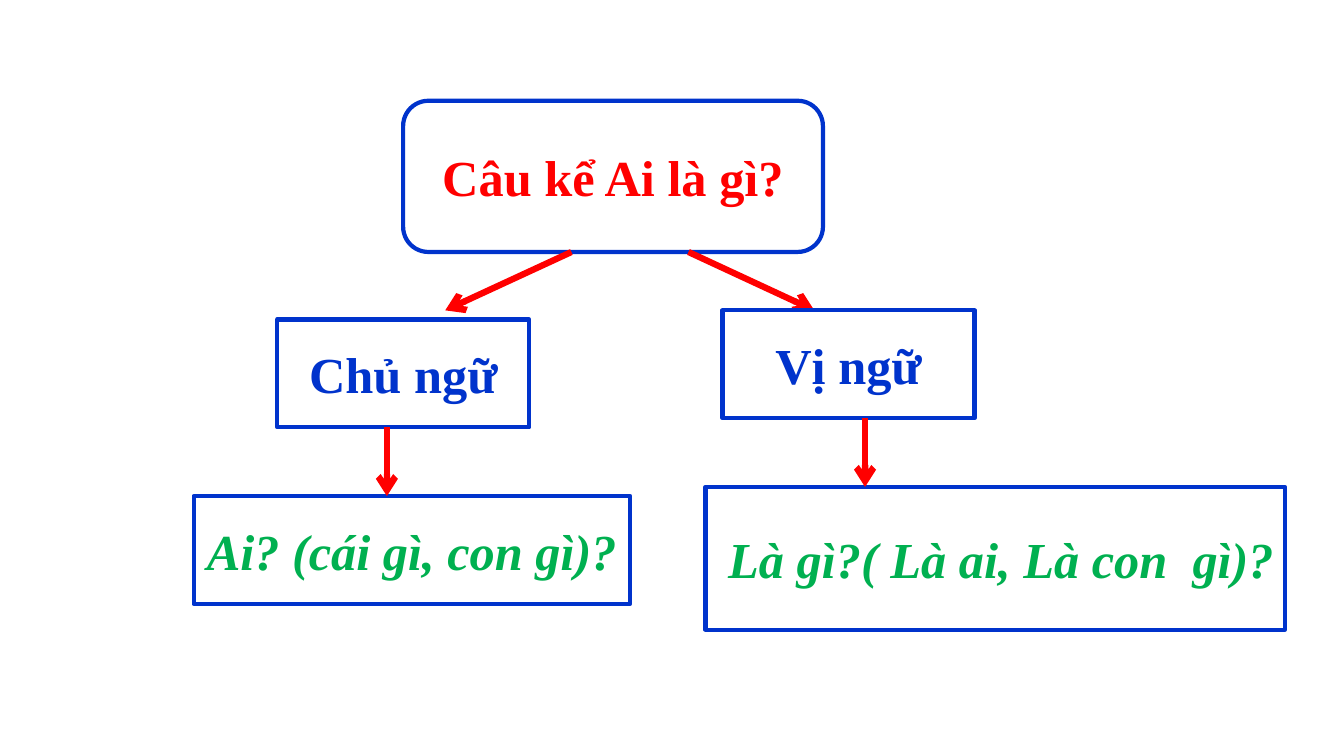
import pptx
import pptx.util
from lxml import etree
from pptx.dml.color import RGBColor
from pptx.enum.shapes import MSO_CONNECTOR, MSO_SHAPE
from pptx.enum.text import MSO_ANCHOR, PP_ALIGN
from pptx.oxml.ns import qn
from pptx.util import Cm, Pt

RED = RGBColor(0xFF, 0x00, 0x00)
BLUE = RGBColor(0x00, 0x33, 0xCC)
GREEN = RGBColor(0x00, 0xB0, 0x50)
WHITE = RGBColor(0xFF, 0xFF, 0xFF)

SENTENCE = ("Câu kể Ai là gì?", (10.16, 2.54, 10.58, 3.81))
BRANCHES = [
    {
        "part": ("Chủ ngữ", (6.99, 8.05, 6.35, 2.72)),
        "question": ("Ai? (cái gì, con gì)?", (4.88, 12.5, 11, 2.72)),
        "question_align": PP_ALIGN.CENTER,
        "question_insets": (0.25, 0.25),
        "sentence_arrow_x": (14.4, 11.22),
        "question_arrow_x": 9.75,
    },
    {
        "part": ("Vị ngữ", (18.21, 7.82, 6.35, 2.72)),
        "question": ("Là gì?( Là ai, Là con  gì)?", (17.78, 12.27, 14.6, 3.6)),
        "question_align": PP_ALIGN.LEFT,
        "question_insets": (0.57, 0),
        "sentence_arrow_x": (17.35, 20.52),
        "question_arrow_x": 21.8,
    },
]
ARROW_TIP_Y = 7.82


def add_box(slide, content, color, kind=MSO_SHAPE.RECTANGLE, italic=None,
            align=PP_ALIGN.CENTER, insets=(0.25, 0.25)):
    """Add a white, blue-edged box holding one bold line of text."""
    text, bounds = content
    box = slide.shapes.add_shape(kind, *map(Cm, bounds))
    box.shadow.inherit = False
    box.fill.solid()
    box.fill.fore_color.rgb = WHITE
    box.line.color.rgb = BLUE
    box.line.width = Pt(3)
    frame = box.text_frame
    frame.word_wrap = True
    frame.vertical_anchor = MSO_ANCHOR.MIDDLE
    frame.margin_left, frame.margin_right = map(Cm, insets)
    paragraph = frame.paragraphs[0]
    paragraph.text = text
    paragraph.alignment = align
    font = paragraph.font
    font.name = "Times New Roman"
    font.size = Pt(36)
    font.bold = True
    font.italic = italic
    font.color.rgb = color


def add_arrow(slide, start, end):
    """Add a thick red arrow from start to end."""
    arrow = slide.shapes.add_connector(MSO_CONNECTOR.STRAIGHT, *map(Cm, start + end))
    arrow.line.color.rgb = RED
    arrow.line.width = Pt(4.5)
    etree.SubElement(arrow.line._get_or_add_ln(), qn("a:tailEnd"), type="arrow")
    etree.SubElement(arrow._element.spPr, qn("a:effectLst"))


def bottom(content):
    """Return the lower edge of a box."""
    _, (_, top, _, height) = content
    return top + height


def main():
    """Build the sentence diagram and save it."""
    deck = pptx.Presentation()
    deck.slide_width, deck.slide_height = Cm(33.87), Cm(19.05)
    slide = deck.slides.add_slide(deck.slide_layouts[6])

    add_box(slide, SENTENCE, RED, MSO_SHAPE.ROUNDED_RECTANGLE)
    for branch in BRANCHES:
        part, question = branch["part"], branch["question"]
        start_x, tip_x = branch["sentence_arrow_x"]
        add_arrow(slide, (start_x, bottom(SENTENCE)), (tip_x, ARROW_TIP_Y))
        add_box(slide, part, BLUE)
        add_box(slide, question, GREEN, italic=True,
                align=branch["question_align"], insets=branch["question_insets"])
        down_x, question_top = branch["question_arrow_x"], question[1][1]
        add_arrow(slide, (down_x, bottom(part)), (down_x, question_top))

    deck.save("out.pptx")


if __name__ == "__main__":
    main()
